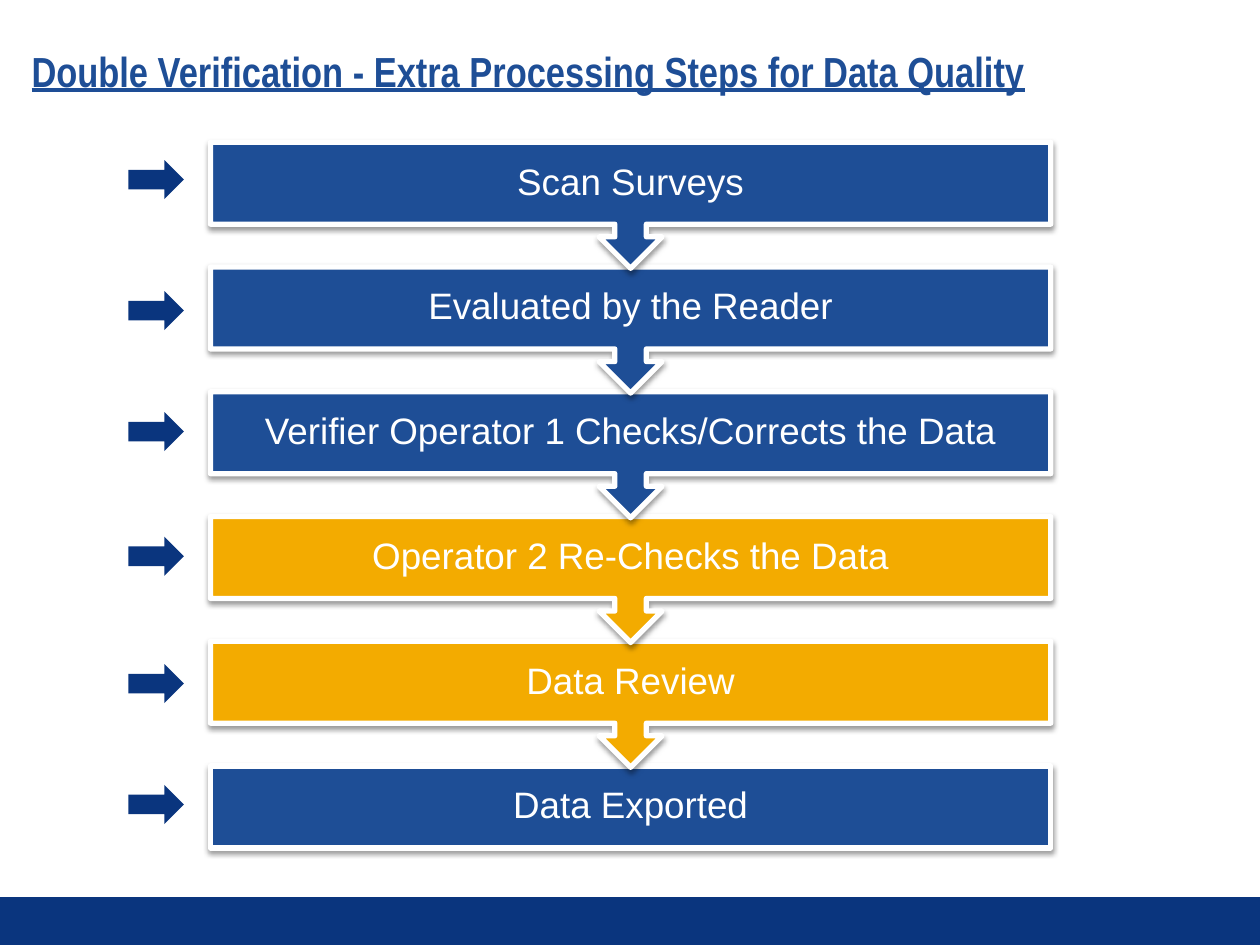
from typing import NamedTuple

from lxml.etree import SubElement
from pptx import Presentation
from pptx.dml.color import RGBColor
from pptx.enum.shapes import MSO_SHAPE
from pptx.enum.text import MSO_ANCHOR, MSO_AUTO_SIZE, PP_ALIGN
from pptx.oxml.ns import qn
from pptx.util import Emu, Pt

PX = 9144  # 100 px to the inch
NAVY, BLUE, GOLD, WHITE = "0A357E", "1E4E96", "F3AB00", "FFFFFF"
STEP_LEFT, STEP_TOP, STEP_WIDTH, PITCH = 167, 113, 667, 99
CALLOUT_HEIGHT, BOX_HEIGHT = 100, 65


class Step(NamedTuple):
    text: str
    color: str
    arrow_top: int


STEPS = [
    Step("Scan Surveys", BLUE, 127),
    Step("Evaluated by the Reader", BLUE, 231),
    Step("Verifier Operator 1 Checks/Corrects the Data", BLUE, 327),
    Step("Operator 2 Re-Checks the Data", GOLD, 426),
    Step("Data Review", GOLD, 527),
    Step("Data Exported", BLUE, 623),
]


def px(count: int) -> Emu:
    return Emu(count * PX)


def rgb(color: str) -> RGBColor:
    return RGBColor.from_string(color)


def add_block(slide, kind, left: int, top: int, width: int, height: int, color: str):
    """Add a plain filled shape with no line or shadow."""
    shape = slide.shapes.add_shape(kind, px(left), px(top), px(width), px(height))
    shape.shadow.inherit = False
    shape.fill.solid()
    shape.fill.fore_color.rgb = rgb(color)
    shape.line.fill.background()
    return shape


def add_shadow(shape) -> None:
    effects = shape._element.spPr.find(qn("a:effectLst"))
    shadow = SubElement(
        effects, qn("a:outerShdw"), blurRad=str(Pt(3.1)), dist=str(Pt(1.6)),
        dir="5400000", rotWithShape="0",
    )
    tint = SubElement(shadow, qn("a:srgbClr"), val="000000")
    SubElement(tint, qn("a:alpha"), val="38000")


def set_text(shape, text: str, size: int, font: str, color: str, align, insets) -> None:
    """Write one line of text; insets are left, top, right and bottom in px."""
    frame = shape.text_frame
    frame.text = text
    frame.word_wrap = True
    frame.auto_size = MSO_AUTO_SIZE.NONE
    frame.vertical_anchor = MSO_ANCHOR.MIDDLE
    frame.margin_left, frame.margin_top, frame.margin_right, frame.margin_bottom = map(px, insets)
    line = frame.paragraphs[0]
    line.alignment = align
    line.line_spacing = 0.9
    style = line.runs[0].font
    style.size, style.name = Pt(size), font
    style.color.rgb = rgb(color)


def add_title(slide, text: str) -> None:
    title = slide.shapes.title
    title.left, title.top, title.width, title.height = map(px, (15, 17, 967, 83))
    set_text(title, text, 24, "Arial Narrow", BLUE, PP_ALIGN.LEFT, (10, 10, 20, 10))
    style = title.text_frame.paragraphs[0].runs[0].font
    style.bold = style.underline = True


def add_step(slide, index: int, step: Step) -> None:
    last = index == len(STEPS) - 1
    kind = MSO_SHAPE.RECTANGLE if last else MSO_SHAPE.DOWN_ARROW_CALLOUT
    height = BOX_HEIGHT if last else CALLOUT_HEIGHT
    top = STEP_TOP + index * PITCH
    box = add_block(slide, kind, STEP_LEFT, top, STEP_WIDTH, height, step.color)
    box.line.color.rgb = rgb(WHITE)
    box.line.width = Pt(3)
    add_shadow(box)
    set_text(box, step.text, 21, "Arial", WHITE, PP_ALIGN.CENTER, (16, 16, 16, 16))


def main() -> None:
    deck = Presentation()
    deck.slide_width, deck.slide_height = px(1000), px(750)
    slide = deck.slides.add_slide(deck.slide_layouts[5])
    add_block(slide, MSO_SHAPE.RECTANGLE, 0, 712, 1000, 38, NAVY)
    add_title(slide, "Double Verification - Extra Processing Steps for Data Quality")
    # Lower steps go first so that each arrow tip lies over the next box.
    for index, step in reversed(list(enumerate(STEPS))):
        add_step(slide, index, step)
    for step in STEPS:
        add_block(slide, MSO_SHAPE.RIGHT_ARROW, 102, step.arrow_top, 44, 31, NAVY)
    deck.save("out.pptx")


if __name__ == "__main__":
    main()
